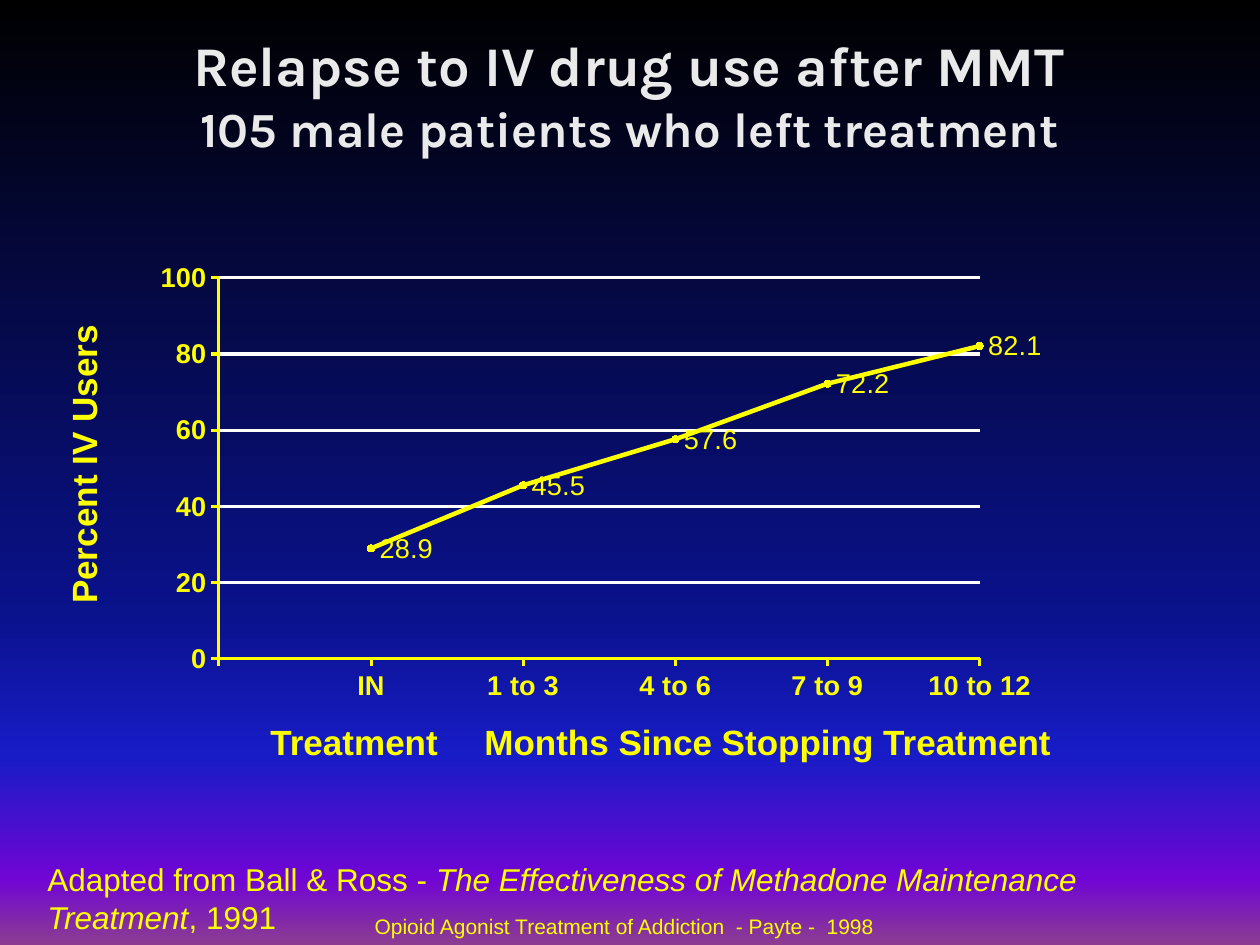
from dataclasses import dataclass

from lxml.etree import SubElement
from pptx import Presentation
from pptx.chart.data import CategoryChartData
from pptx.dml.color import RGBColor
from pptx.enum.chart import XL_CHART_TYPE, XL_LABEL_POSITION, XL_MARKER_STYLE, XL_TICK_MARK
from pptx.enum.text import MSO_ANCHOR, PP_ALIGN
from pptx.oxml import parse_xml
from pptx.oxml.ns import nsdecls, qn
from pptx.util import Emu, Pt

YELLOW = "FFFF00"
WHITE = "FFFFFF"
PALE = "EAEAEA"
SKY = [(0, "000000"), (65, "0A128C"), (80, "181CC7"), (93, "7005D4"), (100, "8C3D91")]


@dataclass(frozen=True)
class Words:
    text: str
    size: float
    bold: bool = False
    italic: bool = False
    color: str = YELLOW
    font: str = "Arial"


@dataclass(frozen=True)
class Block:
    left: int
    top: int
    width: int
    height: int
    lines: tuple[tuple[Words, ...], ...]
    align: PP_ALIGN = PP_ALIGN.CENTER
    anchor: MSO_ANCHOR = MSO_ANCHOR.TOP
    rotation: int = 0
    indent: int = 0
    tab: int = 0


BLOCKS = (
    Block(94, 19, 1071, 150, (
        (Words("Relapse to IV drug use after MMT", 32, True, color=PALE, font="Karla"),),
        (Words("105 male patients who left treatment", 28, True, color=PALE, font="Karla"),),
    ), anchor=MSO_ANCHOR.MIDDLE),
    Block(-237, 440, 635, 49, ((Words("Percent IV Users", 20, True),),), rotation=270),
    Block(220, 714, 883, 55, ((Words("Treatment\tMonths Since Stopping Treatment", 20, True),),),
          align=PP_ALIGN.LEFT, indent=38, tab=254),
    Block(31, 907, 1187, 38,
          ((Words("Opioid Agonist Treatment of Addiction  - Payte -  1998", 12),),)),
    Block(35, 854, 1162, 50, ((
        Words("Adapted from Ball & Ross - ", 18),
        Words("The Effectiveness of Methadone Maintenance Treatment", 18, italic=True),
        Words(", 1991", 18),
    ),), align=PP_ALIGN.LEFT),
)


def px(length: int) -> Emu:
    return Emu(round(length * 914400 / 126))


def rgb(color: str) -> RGBColor:
    return RGBColor.from_string(color)


def style_font(font, words: Words) -> None:
    font.name = words.font
    font.size = Pt(words.size)
    font.bold = words.bold
    font.italic = words.italic
    font.color.rgb = rgb(words.color)


def style_line(line, color: str, width: float) -> None:
    line.color.rgb = rgb(color)
    line.width = Pt(width)


def paint_background(slide) -> None:
    fill = slide.background.fill
    fill.gradient()
    fill.gradient_angle = 270
    stop_list = slide.background._cSld.find(".//" + qn("a:gsLst"))
    for stop in list(stop_list):
        stop_list.remove(stop)
    for percent, color in SKY:
        stop = SubElement(stop_list, qn("a:gs"), pos=str(percent * 1000))
        SubElement(stop, qn("a:srgbClr"), val=color)


def add_block(slide, block: Block) -> None:
    box = slide.shapes.add_textbox(px(block.left), px(block.top), px(block.width), px(block.height))
    box.rotation = block.rotation
    frame = box.text_frame
    frame.word_wrap = True
    frame.vertical_anchor = block.anchor
    paragraph = frame.paragraphs[0]
    paragraph.alignment = block.align
    if block.tab:
        properties = paragraph._p.get_or_add_pPr()
        properties.set("marL", "0")
        properties.set("indent", str(px(block.indent)))
        tabs = SubElement(properties, qn("a:tabLst"))
        SubElement(tabs, qn("a:tab"), pos=str(px(block.tab)), algn="l")
    for number, line in enumerate(block.lines):
        if number:
            paragraph.add_line_break()
        for words in line:
            run = paragraph.add_run()
            run.text = words.text
            style_font(run.font, words)


def add_relapse_chart(slide) -> None:
    data = CategoryChartData(number_format="0.0")
    data.categories = [" ", "IN", "1 to 3", "4 to 6", "7 to 9", "10 to 12"]
    data.add_series("Series 1", [None, 28.9, 45.5, 57.6, 72.2, 82.1])
    chart = slide.shapes.add_chart(
        XL_CHART_TYPE.LINE_MARKERS, px(128), px(242), px(1109), px(493), data).chart
    chart.has_legend = False
    chart.has_title = False
    style_font(chart.font, Words("", 15.5))

    percent = chart.value_axis
    for axis in (chart.category_axis, percent):
        axis.major_tick_mark = XL_TICK_MARK.OUTSIDE
        axis.minor_tick_mark = XL_TICK_MARK.NONE
        style_font(axis.tick_labels.font, Words("", 15.5, True))
        style_line(axis.format.line, YELLOW, 1.72)
    percent.minimum_scale = 0
    percent.maximum_scale = 100
    percent.major_unit = 20
    percent.tick_labels.number_format = "0"
    percent.tick_labels.number_format_is_linked = False
    style_line(percent.major_gridlines.format.line, WHITE, 1.72)
    percent._element.find(qn("c:majorUnit")).addprevious(
        parse_xml(f'<c:crossBetween {nsdecls("c")} val="midCat"/>'))

    plot = chart.plots[0]
    plot.vary_by_categories = False
    users = plot.series[0]
    users.smooth = False
    style_line(users.format.line, YELLOW, 2.58)
    users.marker.style = XL_MARKER_STYLE.CIRCLE
    users.marker.size = 4
    users.marker.format.fill.solid()
    users.marker.format.fill.fore_color.rgb = rgb(YELLOW)
    users.marker.format.line.color.rgb = rgb(YELLOW)
    labels = users.data_labels
    labels.show_value = True
    labels.position = XL_LABEL_POSITION.RIGHT
    labels.number_format = "0.0"
    labels.number_format_is_linked = False
    style_font(labels.font, Words("", 15.5))

    area = chart._chartSpace.find(".//" + qn("c:plotArea"))
    for layout in area.findall(qn("c:layout")):
        area.remove(layout)
    area.insert(0, parse_xml(
        f'<c:layout {nsdecls("c")}><c:manualLayout><c:layoutTarget val="inner"/>'
        '<c:xMode val="edge"/><c:yMode val="edge"/><c:x val="0.082"/><c:y val="0.073"/>'
        '<c:w val="0.686"/><c:h val="0.772"/></c:manualLayout></c:layout>'))


def main() -> None:
    deck = Presentation()
    deck.slide_width = px(1260)
    deck.slide_height = px(945)
    slide = deck.slides.add_slide(deck.slide_layouts[6])
    paint_background(slide)
    add_relapse_chart(slide)
    for block in BLOCKS:
        add_block(slide, block)
    deck.save("out.pptx")


if __name__ == "__main__":
    main()
